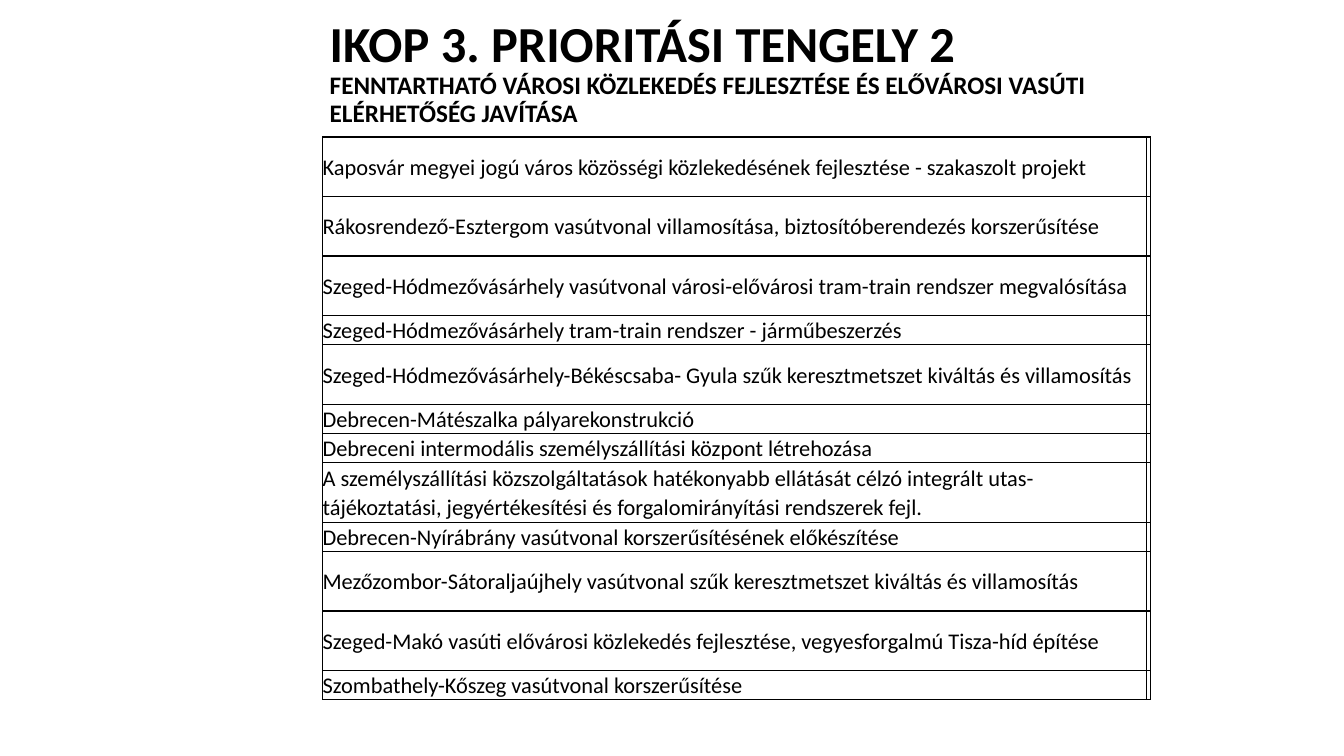
from lxml.etree import SubElement as Sub
from pptx import Presentation
from pptx.dml.color import RGBColor
from pptx.enum.text import MSO_ANCHOR as Anchor, MSO_AUTO_SIZE as Fit, PP_ALIGN as Align
from pptx.oxml.ns import qn
from pptx.util import Emu, Pt

PX = 9144
BLACK = RGBColor(0, 0, 0)
WHITE = RGBColor(255, 255, 255)
FONT = "Calibri"
TALL, LOW = 59, 29

HEAD = "IKOP 3. PRIORITÁSI TENGELY 2"
SUB = "FENNTARTHATÓ VÁROSI KÖZLEKEDÉS FEJLESZTÉSE ÉS ELŐVÁROSI VASÚTI ELÉRHETŐSÉG JAVÍTÁSA"
ROWS = [
    ("Kaposvár megyei jogú város közösségi közlekedésének fejlesztése - szakaszolt projekt", TALL),
    ("Rákosrendező-Esztergom vasútvonal villamosítása, biztosítóberendezés korszerűsítése", TALL),
    ("Szeged-Hódmezővásárhely vasútvonal városi-elővárosi tram-train rendszer megvalósítása", TALL),
    ("Szeged-Hódmezővásárhely tram-train rendszer - járműbeszerzés", LOW),
    ("Szeged-Hódmezővásárhely-Békéscsaba- Gyula szűk keresztmetszet kiváltás és villamosítás", TALL),
    ("Debrecen-Mátészalka pályarekonstrukció", LOW),
    ("Debreceni intermodális személyszállítási központ létrehozása", LOW),
    ("A személyszállítási közszolgáltatások hatékonyabb ellátását célzó integrált "
     "utas-tájékoztatási, jegyértékesítési és forgalomirányítási rendszerek fejl.", TALL),
    ("Debrecen-Nyírábrány vasútvonal korszerűsítésének előkészítése", LOW),
    ("Mezőzombor-Sátoraljaújhely vasútvonal szűk keresztmetszet kiváltás és villamosítás", TALL),
    ("Szeged-Makó vasúti elővárosi közlekedés fejlesztése, vegyesforgalmú Tisza-híd építése", TALL),
    ("Szombathely-Kőszeg vasútvonal korszerűsítése", LOW),
]


def px(*vals):
    """Turn px lengths into EMU."""
    return [Emu(val * PX) for val in vals]


def write(para, text, size=16, bold=False, space=1.07):
    """Add a formatted run to a paragraph."""
    para.alignment = Align.LEFT
    para.line_spacing = space
    run = para.add_run()
    run.text = text
    font = run.font
    font.name, font.size, font.bold = FONT, Pt(size), bold
    font.color.rgb = BLACK


def title(slide, box):
    """Fill the title placeholder with a heading and a subheading."""
    shape = slide.shapes.title
    shape.left, shape.top, shape.width, shape.height = px(*box)
    frame = shape.text_frame
    frame.word_wrap = True
    frame.auto_size = Fit.NONE
    frame.vertical_anchor = Anchor.MIDDLE
    para = frame.paragraphs[0]
    write(para, HEAD, size=36, bold=True, space=0.9)
    para.add_line_break()
    Sub(para._p.find(qn("a:br")), qn("a:rPr"), sz="3600")
    write(para, SUB, size=18, bold=True, space=0.9)


def edge(cell):
    """Draw a thin black line on each side of a cell."""
    props = cell._tc.get_or_add_tcPr()
    for side in "LRTB":
        line = Sub(props, qn(f"a:ln{side}"), w=str(Pt(1)))
        fill = Sub(line, qn("a:solidFill"))
        Sub(fill, qn("a:srgbClr"), val=str(BLACK))


def style(cell):
    """Give a cell its edges, fill and zero margins."""
    edge(cell)
    cell.fill.solid()
    cell.fill.fore_color.rgb = WHITE
    cell.margin_left = cell.margin_right = cell.margin_top = cell.margin_bottom = 0
    cell.vertical_anchor = Anchor.MIDDLE


def table(slide, box, slim=4):
    """List the projects beside one slim empty column."""
    grid = slide.shapes.add_table(len(ROWS), 2, *px(*box)).table
    grid.first_row = grid.horz_banding = False
    grid.columns[0].width, grid.columns[1].width = px(box[2] - slim, slim)
    for row, (text, high) in zip(grid.rows, ROWS):
        row.height = px(high)[0]
        name, blank = row.cells
        style(name)
        style(blank)
        write(name.text_frame.paragraphs[0], text)
        Sub(blank.text_frame.paragraphs[0]._p, qn("a:endParaRPr"), sz="1000")


def main():
    """Build and save the slide."""
    deck = Presentation()
    deck.slide_width, deck.slide_height = px(1333, 750)
    slide = deck.slides.add_slide(deck.slide_layouts[5])
    title(slide, (317, 10, 820, 125))
    table(slide, (320, 136, 821, sum(high for _, high in ROWS)))
    deck.save("out.pptx")


if __name__ == "__main__":
    main()
